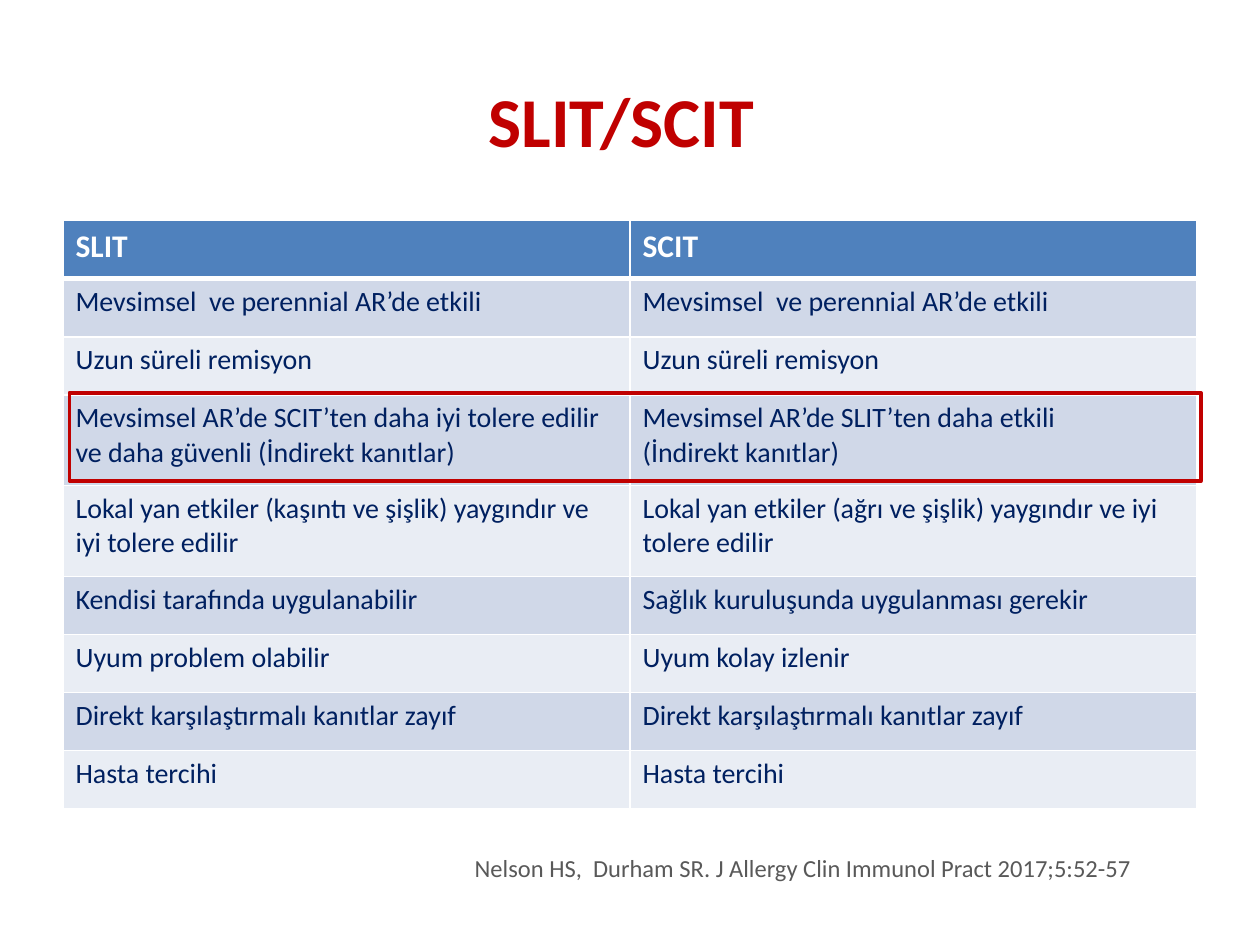
from dataclasses import dataclass

from lxml import etree
from pptx import Presentation
from pptx.dml.color import RGBColor
from pptx.enum.shapes import MSO_SHAPE
from pptx.enum.text import MSO_ANCHOR, PP_ALIGN
from pptx.oxml.ns import qn
from pptx.util import Cm, Pt

RECT = MSO_SHAPE.RECTANGLE
MIDDLE = MSO_ANCHOR.MIDDLE
CENTER = PP_ALIGN.CENTER


@dataclass(frozen=True)
class Theme:
    font: str = "Calibri"
    red: str = "C00000"
    navy: str = "002060"
    grey: str = "595959"
    white: str = "FFFFFF"
    head: str = "4F81BD"
    bands: tuple = ("D0D8E8", "E9EDF4")
    title: int = 40
    space: int = 44
    label: int = 18
    body: int = 16
    note: int = 14


look = Theme()


def add_run(para, text, size, color, bold=False):
    run = para.add_run()
    run.text = text
    run.font.name = look.font
    run.font.size = Pt(size)
    run.font.bold = bold
    run.font.color.rgb = RGBColor.from_string(color)


def add_edge(cell, side, width):
    line = etree.SubElement(cell._tc.get_or_add_tcPr(), qn(f"a:ln{side}"), w=str(Pt(width)))
    fill = etree.SubElement(line, qn("a:solidFill"))
    etree.SubElement(fill, qn("a:srgbClr"), val=look.white)


deck = Presentation()
deck.slide_width, deck.slide_height = Cm(25.4), Cm(19.05)
slide = deck.slides.add_slide(deck.slide_layouts[5])

# Title
title = slide.shapes.title
title.left, title.top, title.width, title.height = Cm(1.27), Cm(0.76), Cm(22.86), Cm(3.18)
title.text_frame.vertical_anchor = MIDDLE
para = title.text_frame.paragraphs[0]
para.alignment = CENTER
add_run(para, "SLIT/SCIT", look.title, look.red, True)
add_run(para, " ", look.space, look.red, True)

# Comparison table: one line of text per paragraph
rows = [
    ("SLIT", "SCIT"),
    ("Mevsimsel  ve perennial AR’de etkili", "Mevsimsel  ve perennial AR’de etkili"),
    ("Uzun süreli remisyon", "Uzun süreli remisyon"),
    ("Mevsimsel AR’de SCIT’ten daha iyi tolere edilir ve daha güvenli (İndirekt kanıtlar)",
     "Mevsimsel AR’de SLIT’ten daha etkili\n(İndirekt kanıtlar)"),
    ("Lokal yan etkiler (kaşıntı ve şişlik) yaygındır ve iyi tolere edilir",
     "Lokal yan etkiler (ağrı ve şişlik) yaygındır ve iyi tolere edilir"),
    ("Kendisi tarafında uygulanabilir", "Sağlık kuruluşunda uygulanması gerekir"),
    ("Uyum problem olabilir", "Uyum kolay izlenir"),
    ("Direkt karşılaştırmalı kanıtlar zayıf", "Direkt karşılaştırmalı kanıtlar zayıf"),
    ("Hasta tercihi", "Hasta tercihi"),
]
tall = (3, 4)
table = slide.shapes.add_table(
    len(rows), 2, Cm(1.27), Cm(4.45), Cm(22.86), Cm(11.84)).table
for r, texts in enumerate(rows):
    table.rows[r].height = Cm(1.83 if r in tall else 1.17)
    head = r == 0
    size, color = (look.label, look.white) if head else (look.body, look.navy)
    back = look.head if head else look.bands[(r - 1) % 2]
    for c, text in enumerate(texts):
        cell = table.cell(r, c)
        for side in "LRTB":
            thick = (r, side) in ((0, "B"), (1, "T"))
            add_edge(cell, side, 3 if thick else 1)
        cell.fill.solid()
        cell.fill.fore_color.rgb = RGBColor.from_string(back)
        for i, line in enumerate(text.split("\n")):
            frame = cell.text_frame
            para = frame.add_paragraph() if i else frame.paragraphs[0]
            add_run(para, line, size, color, head)

# Source note
note = slide.shapes.add_textbox(Cm(9.32), Cm(17.07), Cm(14.48), Cm(0.86))
note.text_frame.word_wrap = True
add_run(note.text_frame.paragraphs[0],
        "Nelson HS,  Durham SR. J Allergy Clin Immunol Pract 2017;5:52-57",
        look.note, look.grey)

# Frame around the key row
frame = slide.shapes.add_shape(RECT, Cm(1.4), Cm(7.92), Cm(22.81), Cm(1.78))
frame.shadow.inherit = False
frame.fill.background()
frame.line.color.rgb = RGBColor.from_string(look.red)
frame.line.width = Pt(2)

deck.save("out.pptx")
